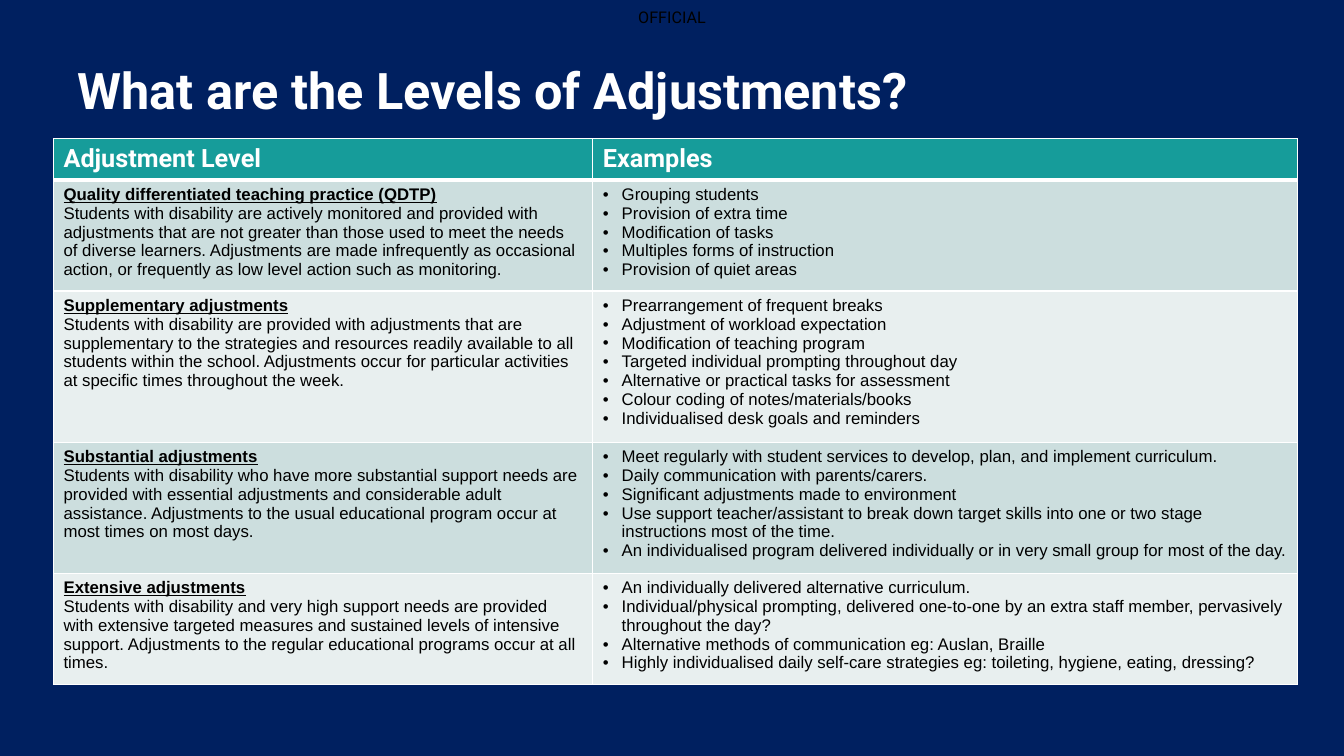
from lxml.etree import SubElement
from pptx import Presentation
from pptx.dml.color import RGBColor
from pptx.enum.text import MSO_ANCHOR, PP_ALIGN
from pptx.oxml.ns import qn
from pptx.util import Pt

WHITE, BLACK, NAVY, TEAL = "FFFFFF", "000000", "002060", "169C9A"
BANDS = ["CCDEDE", "E8EFEF"]
COLUMN_WIDTHS = [385.2, 503.3]
ROW_HEIGHTS = [29.5, 74.2, 101.4, 87.8, 74.2]
HEADINGS = ["Adjustment Level", "Examples"]

TITLE_FORMAT = {"name": "Roboto", "size": Pt(36), "bold": True}
HEADING_FORMAT = {"name": "Roboto", "size": Pt(18), "bold": True}
LEVEL_FORMAT = {"name": "Arial", "size": Pt(12), "bold": True, "underline": True}
BODY_FORMAT = {"name": "Arial", "size": Pt(12), "bold": False, "underline": False}
MARKING_FORMAT = {"name": "Roboto", "size": Pt(11.5)}

# Each level: name, description, examples
LEVELS = [
    ("Quality differentiated teaching practice (QDTP)",
     "Students with disability are actively monitored and provided with adjustments "
     "that are not greater than those used to meet the needs of diverse learners. "
     "Adjustments are made infrequently as occasional action, or frequently as low "
     "level action such as monitoring.",
     ["Grouping students",
      "Provision of extra time",
      "Modification of tasks",
      "Multiples forms of instruction",
      "Provision of quiet areas"]),
    ("Supplementary adjustments",
     "Students with disability are provided with adjustments that are supplementary "
     "to the strategies and resources readily available to all students within the "
     "school. Adjustments occur for particular activities at specific times "
     "throughout the week.",
     ["Prearrangement of frequent breaks",
      "Adjustment of workload expectation",
      "Modification of teaching program",
      "Targeted individual prompting throughout day",
      "Alternative or practical tasks for assessment",
      "Colour coding of notes/materials/books",
      "Individualised desk goals and reminders"]),
    ("Substantial adjustments",
     "Students with disability who have more substantial support needs are provided "
     "with essential adjustments and considerable adult assistance. Adjustments to "
     "the usual educational program occur at most times on most days.",
     ["Meet regularly with student services to develop, plan, and implement curriculum.",
      "Daily communication with parents/carers.",
      "Significant adjustments made to environment",
      "Use support teacher/assistant to break down target skills into one or two stage "
      "instructions most of the time.",
      "An individualised program delivered individually or in very small group for "
      "most of the day."]),
    ("Extensive adjustments",
     "Students with disability and very high support needs are provided with extensive "
     "targeted measures and sustained levels of intensive support. Adjustments to the "
     "regular educational programs occur at all times.",
     ["An individually delivered alternative curriculum.",
      "Individual/physical prompting, delivered one-to-one by an extra staff member, "
      "pervasively throughout the day?",
      "Alternative methods of communication eg: Auslan, Braille",
      "Highly individualised daily self-care strategies eg: toileting, hygiene, "
      "eating, dressing?"]),
]


def paint(color_format, color):
    color_format.rgb = RGBColor.from_string(color)


def fill_solid(fill, color):
    fill.solid()
    paint(fill.fore_color, color)


def add_bullet(paragraph):
    properties = paragraph._p.get_or_add_pPr()
    properties.set("marL", str(Pt(13.5)))
    properties.set("indent", str(Pt(-13.5)))
    SubElement(properties, qn("a:buFont"), typeface="Arial")
    SubElement(properties, qn("a:buChar"), char="•")


def write(text_frame, lines, color, bulleted=False):
    """Write one paragraph for each (text, format) pair."""
    for index, (text, text_format) in enumerate(lines):
        paragraph = text_frame.add_paragraph() if index else text_frame.paragraphs[0]
        if bulleted:
            add_bullet(paragraph)
        font = paragraph.add_run().font
        paragraph.runs[0].text = text
        for name, value in text_format.items():
            setattr(font, name, value)
        paint(font.color, color)


def set_borders(cell, top, bottom):
    properties = cell._tc.get_or_add_tcPr()
    widths = {"lnL": 1, "lnR": 1, "lnT": top, "lnB": bottom}
    for position, (side, width) in enumerate(widths.items()):
        line = SubElement(properties, qn(f"a:{side}"), w=str(Pt(width)))
        solid = SubElement(line, qn("a:solidFill"))
        SubElement(solid, qn("a:srgbClr"), val=WHITE)
        properties.insert(position, line)


def add_title(slide, text):
    title = slide.shapes.title
    title.left, title.top, title.width, title.height = Pt(48.2), Pt(43.2), Pt(838.8), Pt(89.3)
    title.text_frame.vertical_anchor = MSO_ANCHOR.TOP
    write(title.text_frame, [(text, TITLE_FORMAT)], WHITE)
    title.text_frame.paragraphs[0].alignment = PP_ALIGN.LEFT
    title.text_frame.paragraphs[0].line_spacing = 0.9


def add_marking(slide, text):
    box = slide.shapes.add_textbox(Pt(420), Pt(2), Pt(120), Pt(20))
    box.text_frame.word_wrap = True
    box.text_frame.vertical_anchor = MSO_ANCHOR.MIDDLE
    write(box.text_frame, [(text, MARKING_FORMAT)], BLACK)
    box.text_frame.paragraphs[0].alignment = PP_ALIGN.CENTER


def add_levels_table(slide):
    table = slide.shapes.add_table(
        len(ROW_HEIGHTS), len(COLUMN_WIDTHS), Pt(38.2), Pt(99.2),
        Pt(sum(COLUMN_WIDTHS)), Pt(sum(ROW_HEIGHTS))).table
    for column, width in zip(table.columns, COLUMN_WIDTHS):
        column.width = Pt(width)
    for row, height in zip(table.rows, ROW_HEIGHTS):
        row.height = Pt(height)

    # Header row
    for column_index, heading in enumerate(HEADINGS):
        cell = table.cell(0, column_index)
        write(cell.text_frame, [(heading, HEADING_FORMAT)], WHITE)
        fill_solid(cell.fill, TEAL)
        set_borders(cell, top=1, bottom=3)

    # Level rows
    for row_index, (level, description, examples) in enumerate(LEVELS, 1):
        level_cell, example_cell = table.rows[row_index].cells
        write(level_cell.text_frame,
              [(level, LEVEL_FORMAT), (description, BODY_FORMAT)], BLACK)
        write(example_cell.text_frame,
              [(example, BODY_FORMAT) for example in examples], BLACK, bulleted=True)
        for cell in (level_cell, example_cell):
            fill_solid(cell.fill, BANDS[(row_index - 1) % 2])
            set_borders(cell, top=3 if row_index == 1 else 1, bottom=1)


def main():
    presentation = Presentation()
    presentation.slide_width, presentation.slide_height = Pt(960), Pt(540)
    slide = presentation.slides.add_slide(presentation.slide_layouts[5])
    fill_solid(slide.background.fill, NAVY)
    add_marking(slide, "OFFICIAL")
    add_title(slide, "What are the Levels of Adjustments?")
    add_levels_table(slide)
    presentation.save("out.pptx")


if __name__ == "__main__":
    main()
